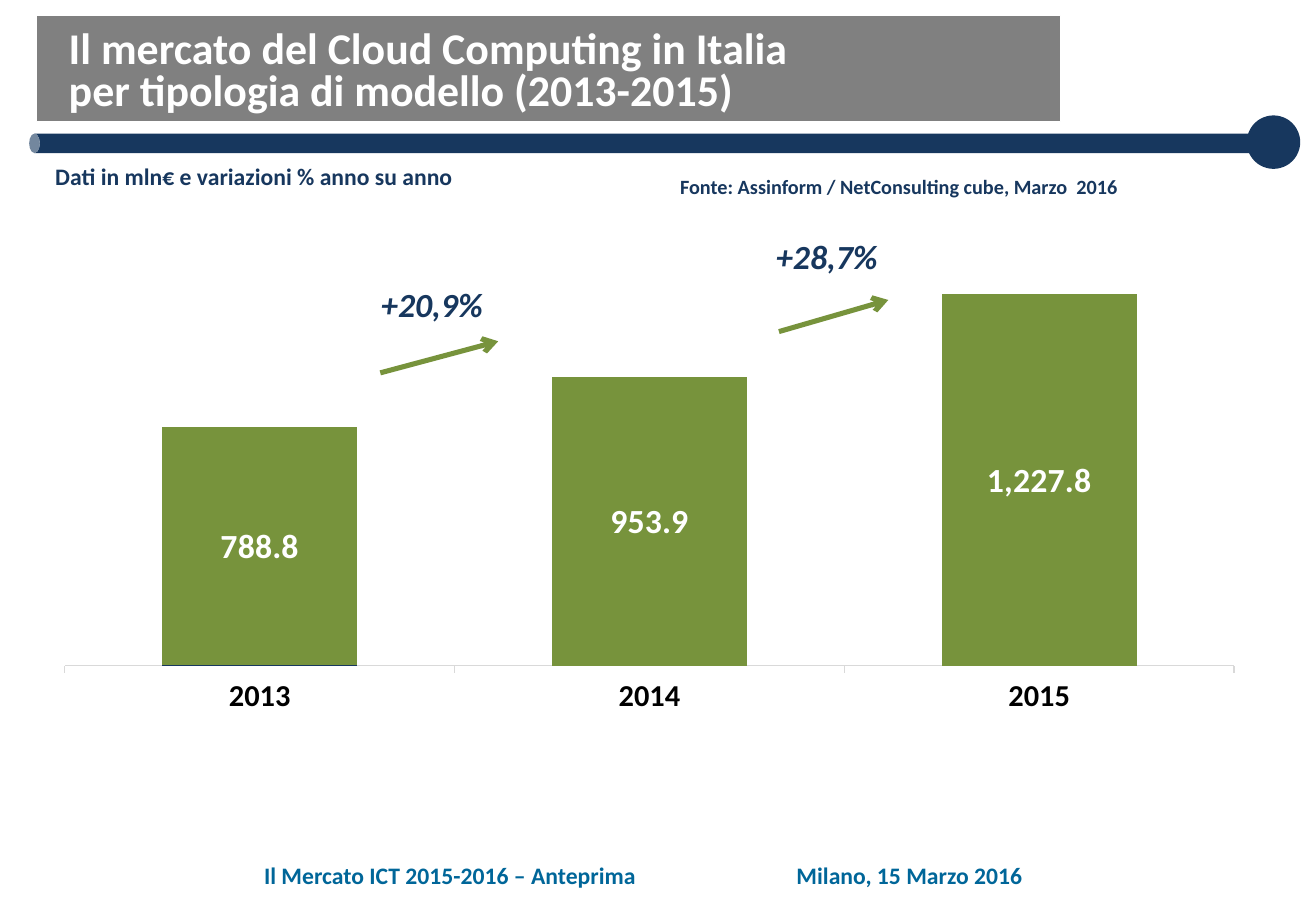
from lxml import etree
from pptx import Presentation
from pptx import util as u
from pptx.chart.data import CategoryChartData
from pptx.dml.color import RGBColor
from pptx.enum import chart as charts, shapes, text
from pptx.oxml import ns

NAVY = RGBColor(0x17, 0x37, 0x5E)
GREEN = RGBColor(0x77, 0x93, 0x3C)
GRAY = RGBColor(0x80, 0x80, 0x80)
TEAL = RGBColor(0x00, 0x66, 0x99)
SILVER = RGBColor(0xD9, 0xD9, 0xD9)
WHITE = RGBColor(0xFF, 0xFF, 0xFF)
BLACK = RGBColor(0x00, 0x00, 0x00)


class MarketSlide:
    face = "Calibri"

    def __init__(self, deck):
        self.column = deck.slide_width / 100
        self.row = deck.slide_height / 100
        self.page = deck.slides.add_slide(deck.slide_layouts[5])

    def place(self, left, top, width, height):
        return (round(left * self.column), round(top * self.row),
                round(width * self.column), round(height * self.row))

    def style(self, font, size, color, bold=True, italic=False):
        font.name = self.face
        font.size = u.Pt(size)
        font.bold = bold
        font.italic = italic
        font.color.rgb = color

    def shape(self, kind, area, fill, line=None):
        shape = self.page.shapes.add_shape(kind, *self.place(*area))
        shape.shadow.inherit = False
        shape.fill.solid()
        shape.fill.fore_color.rgb = fill
        if line is None:
            shape.line.fill.background()
        else:
            shape.line.color.rgb = line
            shape.line.width = u.Pt(0.75)
        return shape

    def title(self, area, first, second):
        title = self.page.shapes.title
        title.element.getparent().append(title.element)
        title.left, title.top, title.width, title.height = self.place(*area)
        frame = title.text_frame
        frame.auto_size = text.MSO_AUTO_SIZE.NONE
        frame.vertical_anchor = text.MSO_ANCHOR.TOP
        para = frame.paragraphs[0]
        para.add_run().text = first
        para.add_line_break()
        para.add_run().text = second
        para.alignment = text.PP_ALIGN.LEFT
        para.line_spacing = 0.8
        self.style(para.font, 26, WHITE)

    def label(self, area, words, size, color, italic=False):
        box = self.page.shapes.add_textbox(*self.place(*area))
        box.text_frame.word_wrap = False
        para = box.text_frame.paragraphs[0]
        para.text = words
        para.alignment = text.PP_ALIGN.CENTER
        self.style(para.font, size, color, italic=italic)

    def arrow(self, left, top, width, rise):
        begin = self.place(left, top, 0, 0)[:2]
        end = self.place(left + width, top - rise, 0, 0)[:2]
        arrow = self.page.shapes.add_connector(
            shapes.MSO_CONNECTOR.STRAIGHT, *begin, *end)
        arrow.line.color.rgb = GREEN
        arrow.line.width = u.Pt(3)
        properties = arrow.element.spPr
        etree.SubElement(properties.find(ns.qn("a:ln")),
                         ns.qn("a:tailEnd"), type="arrow")
        etree.SubElement(properties, ns.qn("a:effectLst"))

    def columns(self, area, categories, series, top_value):
        data = CategoryChartData()
        data.categories = categories
        for name, values, color in series:
            data.add_series(name, values)
        chart = self.page.shapes.add_chart(
            charts.XL_CHART_TYPE.COLUMN_STACKED, *self.place(*area), data).chart
        chart.has_legend = False
        chart.has_title = False
        self.style(chart.font, 18, BLACK)
        plot = chart.plots[0]
        plot.gap_width = 100
        plot.overlap = 100
        plot.vary_by_categories = False
        for item, (name, values, color) in zip(plot.series, series):
            item.format.fill.solid()
            item.format.fill.fore_color.rgb = color
        labels = plot.series[-1].data_labels
        labels.show_value = True
        labels.number_format = "#,##0.0"
        labels.number_format_is_linked = False
        labels.position = charts.XL_LABEL_POSITION.CENTER
        self.style(labels.font, 20, WHITE)
        axis = chart.value_axis
        axis.minimum_scale = 0
        axis.maximum_scale = top_value
        axis.has_major_gridlines = False
        axis.visible = False
        axis = chart.category_axis
        axis.major_tick_mark = charts.XL_TICK_MARK.OUTSIDE
        axis.format.line.color.rgb = SILVER
        axis.format.line.width = u.Pt(0.75)
        self.style(axis.tick_labels.font, 18, BLACK)
        self.fix_plot(chart, x=0.05, y=0.03, w=0.92, h=0.72)

    def fix_plot(self, chart, **shares):
        area = chart.element.find(".//" + ns.qn("c:plotArea"))
        layout = area.find(ns.qn("c:layout"))
        if layout is None:
            layout = etree.Element(ns.qn("c:layout"))
            area.insert(0, layout)
        manual = etree.SubElement(layout, ns.qn("c:manualLayout"))
        settings = {"layoutTarget": "inner", "xMode": "edge", "yMode": "edge"}
        for tag, value in {**settings, **shares}.items():
            etree.SubElement(manual, ns.qn("c:" + tag), val=str(value))


def main():
    deck = Presentation()
    deck.slide_width = u.Inches(10.83)
    deck.slide_height = u.Inches(7.5)
    slide = MarketSlide(deck)
    kinds = shapes.MSO_SHAPE

    bar = slide.shape(kinds.CAN, (48.11, -51.6, 1.48, 134.67), NAVY)
    bar.rotation = 270
    bar.adjustments[0] = 0.55
    slide.shape(kinds.RECTANGLE, (2.77, 1.73, 77.84, 11.6), GRAY, WHITE)
    slide.shape(kinds.OVAL, (94.74, 12.67, 4.06, 5.87), NAVY)
    slide.title((4.3, 2.7, 76, 10.5), "Il mercato del Cloud Computing in Italia",
                "per tipologia di modello (2013-2015)")

    slide.columns((0.1, 28.1, 96.58, 60), ("2013", "2014", "2015"),
                  (("Series 1", (1, None, None), NAVY),
                   ("Series 2", (788.8, 953.9, 1227.8), GREEN)), 1300)

    slide.label((0.74, 17.1, 37.12, 4.53),
                "Dati in mln€ e variazioni % anno su anno", 14, NAVY)
    slide.label((50.55, 18.53, 35.55, 4),
                "Fonte: Assinform / NetConsulting cube, Marzo  2016", 12, NAVY)
    for left, top, growth in ((27.98, 30.53, "+20,9%"), (57.99, 25.2, "+28,7%")):
        slide.label((left, top, 9.7, 5.87), growth, 20, NAVY, italic=True)
    slide.arrow(28.9, 40.93, 8.96, 3.47)
    slide.arrow(59.19, 36.4, 8.31, 3.47)
    for left, width, words in ((16.2, 36, "Il Mercato ICT 2015-2016 – Anteprima"),
                               (57.11, 24, "Milano, 15 Marzo 2016")):
        slide.label((left, 93.87, width, 4.53), words, 14, TEAL)

    deck.save("out.pptx")


if __name__ == "__main__":
    main()
